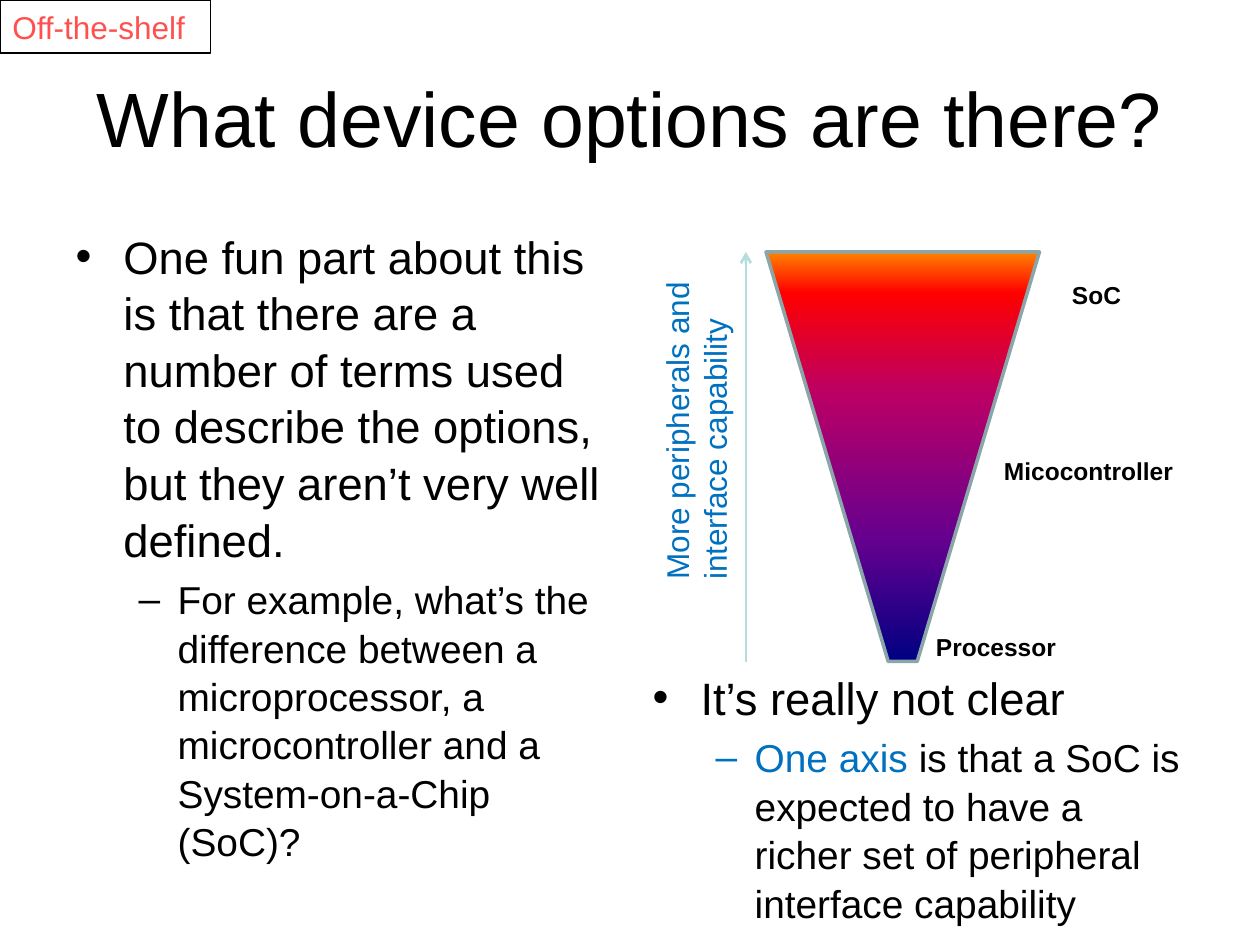
from lxml import etree
from pptx import Presentation
from pptx import util as u
from pptx.dml.color import RGBColor
from pptx.enum import shapes, text
from pptx.oxml.ns import qn

TITLE = "What device options are there?"
COLUMNS = [
    ((0.5, 1.75, 4.42, 4.95), [
        [("One fun part about this is that there are a number of terms used to describe "
          "the options, but they aren’t very well defined.", "000000")],
        [("For example, what’s the difference between a microprocessor, a microcontroller "
          "and a System-on-a-Chip (SoC)?", "000000")],
    ]),
    ((5.08, 5.25, 4.42, 2.08), [
        [("It’s really not clear", "000000")],
        [("One axis ", "0070C0"),
         ("is that a SoC is expected to have a richer set of peripheral interface capability",
          "000000")],
    ]),
]
LEVELS = [(25.9, 0.38, -0.38, "•"), (22.2, 0.81, -0.31, "–")]
DEVICES = ["SoC", "Micocontroller", "Processor"]
AXIS = ["More peripherals and", "interface capability"]
GRADIENT = [(0, "000082"), (30, "66008F"), (65, "BA0066"), (90, "FF0000"), (100, "FF8200")]
FUNNEL = (6.08, 2, 2.17, 3.25)


def inches(box):
    return [u.Inches(value) for value in box]


def style(run, size, color, bold=False):
    run.font.name = "Arial"
    run.font.size = u.Pt(size)
    run.font.bold = bold
    run.font.color.rgb = RGBColor.from_string(color)


def place(shape, box):
    shape.left, shape.top, shape.width, shape.height = inches(box)
    shape.text_frame.auto_size = text.MSO_AUTO_SIZE.NONE


def set_line(shape, color, width):
    shape.line.color.rgb = RGBColor.from_string(color)
    shape.line.width = u.Pt(width)


def fill_body(placeholder, box, items):
    place(placeholder, box)
    frame = placeholder.text_frame
    for level, parts in enumerate(items):
        size, margin, indent, bullet = LEVELS[level]
        paragraph = frame.add_paragraph() if level else frame.paragraphs[0]
        paragraph.level = level
        paragraph.line_spacing = 1.04
        paragraph.space_before = u.Pt(size * 0.2)
        properties = paragraph._p.get_or_add_pPr()
        properties.set("marL", str(u.Inches(margin)))
        properties.set("indent", str(u.Inches(indent)))
        etree.SubElement(properties, qn("a:buChar")).set("char", bullet)
        for words, color in parts:
            run = paragraph.add_run()
            run.text = words
            style(run, size, color)


def add_label(slide, box, lines, size, color, bold=False, wrap=True):
    label = slide.shapes.add_textbox(*inches(box))
    frame = label.text_frame
    frame.text = "\n".join(lines)
    frame.word_wrap = wrap
    for paragraph in frame.paragraphs:
        style(paragraph.runs[0], size, color, bold)
    return label


def add_funnel(slide):
    funnel = slide.shapes.add_shape(shapes.MSO_SHAPE.TRAPEZOID, *inches(FUNNEL))
    funnel.adjustments[0] = 0.447
    funnel.shadow.inherit = False
    funnel._element.spPr.find(qn("a:xfrm")).set("flipV", "1")
    funnel.fill.gradient()
    funnel.fill.gradient_angle = 270
    stops = funnel._element.spPr.find(".//" + qn("a:gsLst"))
    for stop in list(stops):
        stops.remove(stop)
    for position, color in GRADIENT:
        stop = etree.SubElement(stops, qn("a:gs"), pos=str(position * 1000))
        etree.SubElement(stop, qn("a:srgbClr"), val=color)
    set_line(funnel, "8AA6A8", 2)


def add_axis(slide):
    left, top, _, height = FUNNEL
    x = left - 0.16
    arrow = slide.shapes.add_connector(
        shapes.MSO_CONNECTOR.STRAIGHT, *inches((x, top + height, x, top)))
    set_line(arrow, "B6DCDF", 1.5)
    etree.SubElement(arrow.line._get_or_add_ln(), qn("a:tailEnd"), type="arrow")
    etree.SubElement(arrow._element.spPr, qn("a:effectLst"))
    label = add_label(slide, (5.17, 2.14, 0.81, 2.56), AXIS, 18, "0070C0", wrap=False)
    label.text_frame._txBody.bodyPr.set("vert", "vert270")


def add_tag(slide):
    tag = slide.shapes.add_shape(shapes.MSO_SHAPE.RECTANGLE, *inches((0, 0, 1.67, 0.42)))
    tag.shadow.inherit = False
    tag.fill.background()
    set_line(tag, "000000", 0.75)
    tag.text_frame.text = "Off-the-shelf"
    paragraph = tag.text_frame.paragraphs[0]
    paragraph.alignment = text.PP_ALIGN.LEFT
    style(paragraph.runs[0], 18, "FF5050")


def main():
    """Build the slide on device options and save it."""
    presentation = Presentation()
    presentation.slide_width, presentation.slide_height = u.Inches(10), u.Inches(7.5)
    slide = presentation.slides.add_slide(presentation.slide_layouts[3])
    title = slide.shapes.title
    title.text_frame.text = TITLE
    place(title, (0.5, 0.3, 9, 1.25))
    title.text_frame.vertical_anchor = text.MSO_ANCHOR.MIDDLE
    title.text_frame.paragraphs[0].alignment = text.PP_ALIGN.CENTER
    style(title.text_frame.paragraphs[0].runs[0], 44, "000000")
    for index, (box, items) in enumerate(COLUMNS, start=1):
        fill_body(slide.placeholders[index], box, items)
    add_funnel(slide)
    add_axis(slide)
    for index, device in enumerate(DEVICES):
        box = (8.41 - 0.54 * index, 2.17 + 1.4 * index, 1.6, 0.32)
        add_label(slide, box, [device], 14, "000000", bold=True)
    add_tag(slide)
    presentation.save("out.pptx")


if __name__ == "__main__":
    main()
